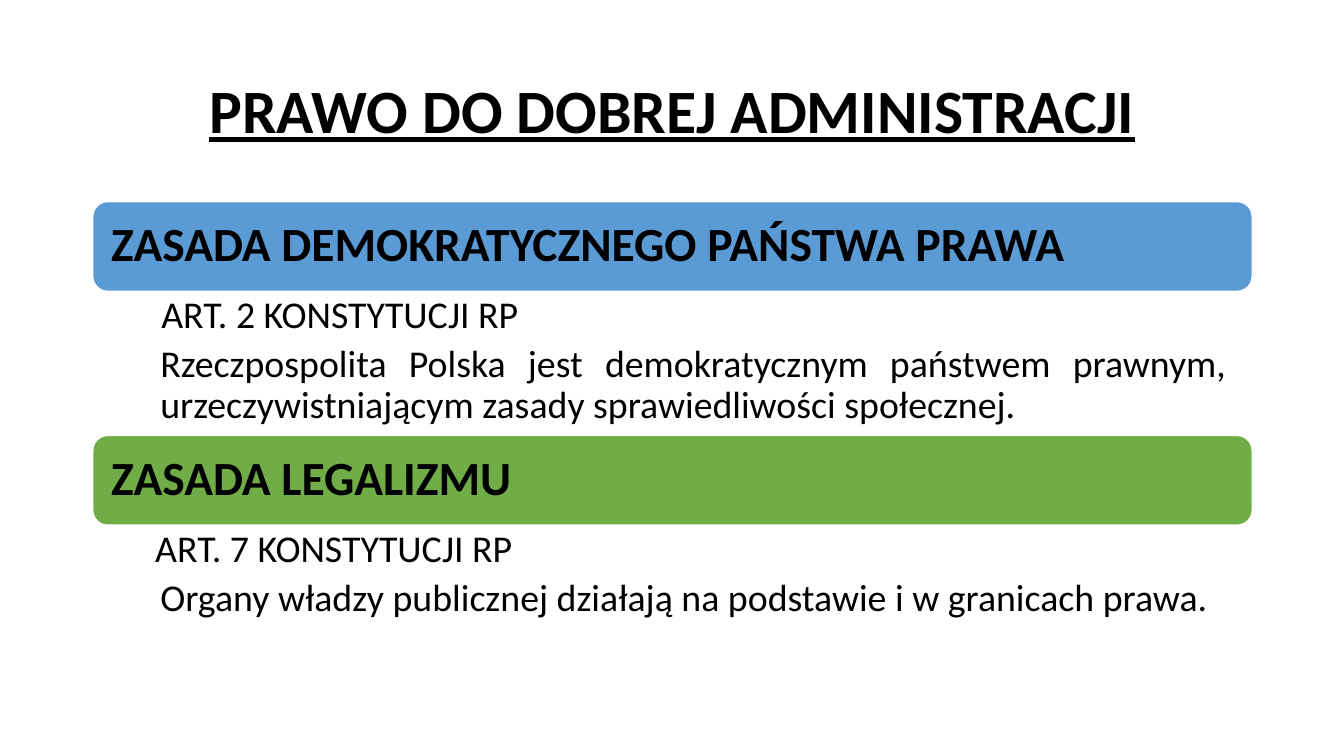
from pptx import Presentation
from pptx import util as u
from pptx.dml.color import RGBColor
from pptx.enum import shapes, text

Inches = u.Inches
COLORS = {"ink": "000000", "edge": "FFFFFF", "blue": "5B9BD5", "green": "70AD47"}
LEFT, WIDTH, BAR_HEIGHT = 0.92, 11.5, 0.89
HEADING = {"size": u.Pt(34), "bold": True}
TITLE = {"size": u.Pt(44), "bold": True, "underline": True}
BODY = {"size": u.Pt(27)}
PRINCIPLES = [
    ("ZASADA DEMOKRATYCZNEGO PAŃSTWA PRAWA", "blue", 2, 1.42, 0.31,
     "ART. 2 KONSTYTUCJI RP",
     "Rzeczpospolita Polska jest demokratycznym państwem prawnym, "
     "urzeczywistniającym zasady sprawiedliwości społecznej."),
    ("ZASADA LEGALIZMU", "green", 4.32, 1.54, 0.25,
     "ART. 7 KONSTYTUCJI RP",
     "Organy władzy publicznej działają na podstawie i w granicach prawa."),
]


def color(key):
    """Return the palette colour for a key."""
    return RGBColor.from_string(COLORS[key])


def set_frame(frame, anchor, margins):
    """Wrap a text frame and set its anchor and its four margins."""
    frame.word_wrap = True
    frame.vertical_anchor = anchor
    for side, margin in zip(("left", "top", "right", "bottom"), margins):
        setattr(frame, f"margin_{side}", Inches(margin))


def write(paragraph, wording, font_format, align):
    """Fill a paragraph with one formatted run."""
    paragraph.alignment = align
    paragraph.line_spacing = 0.9
    run = paragraph.add_run()
    run.text = wording
    for name, value in {"name": "Calibri", **font_format}.items():
        setattr(run.font, name, value)
    run.font.color.rgb = color("ink")


def add_title(slide, wording):
    """Add the centred slide title."""
    title = slide.shapes.add_textbox(Inches(LEFT), Inches(0.4), Inches(WIDTH), Inches(1.45))
    set_frame(title.text_frame, text.MSO_ANCHOR.MIDDLE, (0.1, 0.05, 0.1, 0.05))
    write(title.text_frame.paragraphs[0], wording, TITLE, text.PP_ALIGN.CENTER)


def add_heading_bar(slide, wording, fill, top):
    """Add a rounded bar that carries a principle's name."""
    bar = slide.shapes.add_shape(shapes.MSO_SHAPE.ROUNDED_RECTANGLE, Inches(LEFT),
                                 Inches(top), Inches(WIDTH), Inches(BAR_HEIGHT))
    bar.shadow.inherit = False
    bar.fill.solid()
    bar.fill.fore_color.rgb = color(fill)
    bar.line.color.rgb = color("edge")
    bar.line.width = u.Pt(1)
    set_frame(bar.text_frame, text.MSO_ANCHOR.MIDDLE, (0.14,) * 4)
    write(bar.text_frame.paragraphs[0], wording, HEADING, text.PP_ALIGN.LEFT)


def add_article(slide, top, height, article_indent, article, provision):
    """Add the article reference and its provision below a bar."""
    box = slide.shapes.add_textbox(Inches(LEFT), Inches(top), Inches(WIDTH), Inches(height))
    frame = box.text_frame
    set_frame(frame, text.MSO_ANCHOR.TOP, (0.37, 0.05, 0.26, 0.05))
    rows = [
        (frame.paragraphs[0], article, article_indent, text.PP_ALIGN.LEFT),
        (frame.add_paragraph(), provision, 0.3, text.PP_ALIGN.JUSTIFY),
    ]
    for paragraph, wording, indent, align in rows:
        properties = paragraph._p.get_or_add_pPr()
        properties.set("marL", str(Inches(indent)))
        properties.set("indent", "0")
        write(paragraph, wording, BODY, align)
        paragraph.space_after = u.Pt(5.4)


def main():
    """Build and save the slide."""
    deck = Presentation()
    deck.slide_width, deck.slide_height = Inches(13.33), Inches(7.5)
    slide = deck.slides.add_slide(deck.slide_layouts[6])
    for heading, fill, top, height, indent, article, provision in PRINCIPLES:
        add_heading_bar(slide, heading, fill, top)
        add_article(slide, top + BAR_HEIGHT, height, indent, article, provision)
    add_title(slide, "PRAWO DO DOBREJ ADMINISTRACJI")
    deck.save("out.pptx")


if __name__ == "__main__":
    main()
